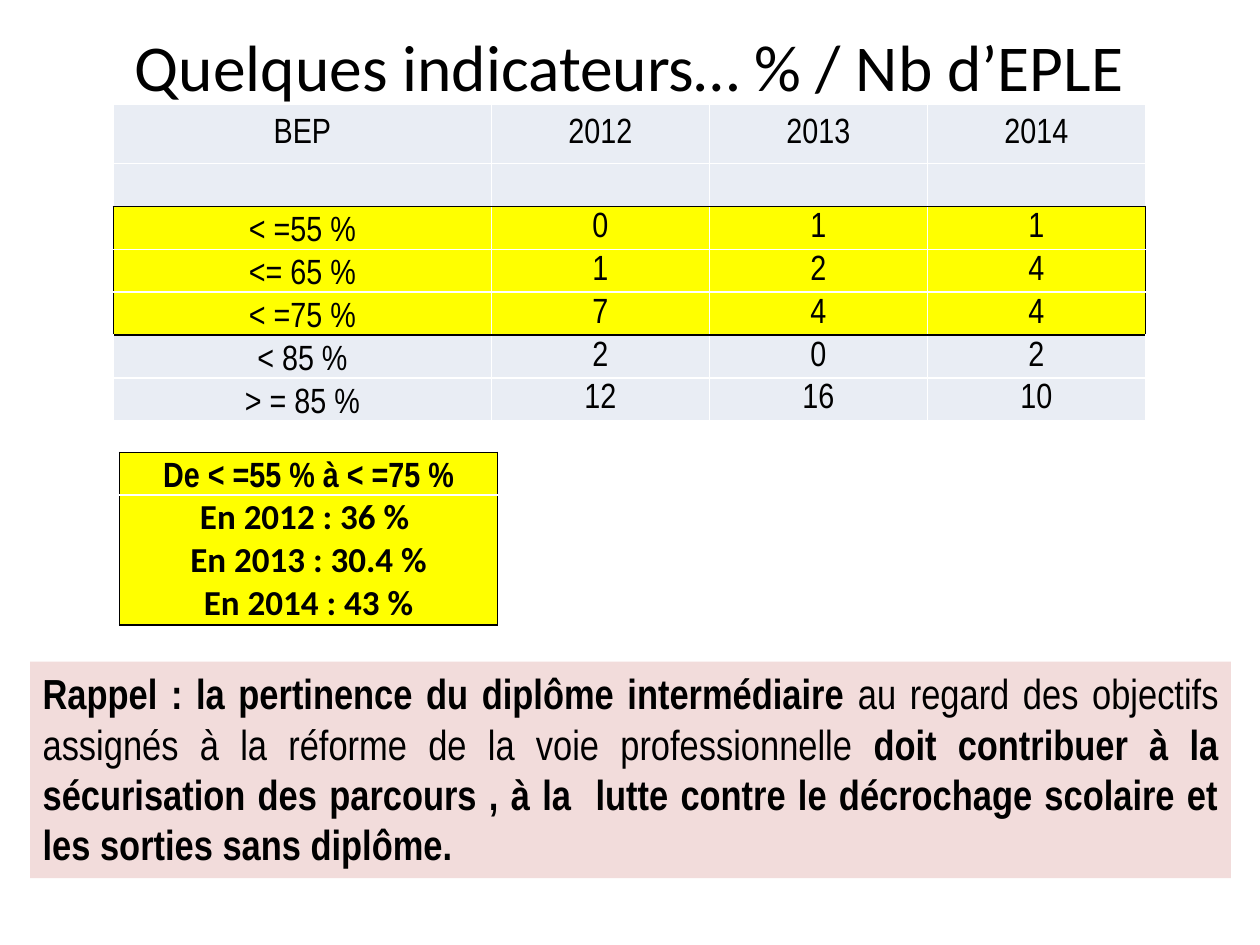
from dataclasses import dataclass

from lxml.etree import fromstring
from pptx import Presentation
from pptx.dml.color import RGBColor
from pptx.enum.shapes import MSO_SHAPE
from pptx.enum.text import MSO_ANCHOR as Anchor, MSO_AUTO_SIZE as AutoSize, PP_ALIGN as Align
from pptx.oxml.ns import nsdecls
from pptx.util import Inches, Pt


@dataclass(frozen=True)
class Theme:
    black: str = "000000"
    white: str = "FFFFFF"
    pale: str = "E9EDF4"
    yellow: str = "FFFF00"
    pink: str = "F2DCDB"
    narrow: str = "Arial Narrow"
    sans: str = "Calibri"
    title_size: float = 37.4
    table_size: int = 20
    note_size: int = 24


theme = Theme()


def write(para, text, font=theme.narrow, size=theme.table_size, bold=False, align=Align.CENTER):
    """Add one formatted span to a paragraph."""
    para.alignment = align
    span = para.add_run()
    span.text = text
    span.font.name, span.font.size, span.font.bold = font, Pt(size), bold
    span.font.color.rgb = RGBColor.from_string(theme.black)


def style_cell(cell, fill, black_sides, anchor):
    """Fill a cell and draw its four borders, black on the named sides."""
    cell.margin_left = cell.margin_right = cell.margin_top = Inches(0.01)
    cell.margin_bottom = 0
    cell.vertical_anchor = anchor
    cell.fill.solid()
    cell.fill.fore_color.rgb = RGBColor.from_string(fill)
    properties = cell._tc.get_or_add_tcPr()
    for position, side in enumerate("LRTB"):
        color = theme.black if side in black_sides else theme.white
        properties.insert(position, fromstring(
            f'<a:ln{side} {nsdecls("a")} w="12700"><a:solidFill>'
            f'<a:srgbClr val="{color}"/></a:solidFill></a:ln{side}>'))


deck = Presentation()
deck.slide_width, deck.slide_height = Inches(10), Inches(7.5)
page = deck.slides.add_slide(deck.slide_layouts[5])

# Title
title = page.shapes.title
title.left, title.top, title.width, title.height = map(Inches, (0.5, 0.21, 9, 0.62))
title.text_frame.vertical_anchor = Anchor.MIDDLE
title.text_frame.auto_size = AutoSize.NONE
write(title.text_frame.paragraphs[0], "Quelques indicateurs… % / Nb d’EPLE",
      font=theme.sans, size=theme.title_size)

# Tables: position, column widths, row heights, highlighted rows, bold, cells
row = 0.34
tables = [
    ((0.9, 0.83), [3, 1.73, 1.73, 1.73], [0.47] + [row] * 6, range(2, 5), False, [
        ["BEP", "2012", "2013", "2014"],
        ["", "", "", ""],
        ["< =55 %", "0", "1", "1"],
        ["<= 65 %", "1", "2", "4"],
        ["< =75 %", "7", "4", "4"],
        ["< 85 %", "2", "0", "2"],
        ["> = 85 %", "12", "16", "10"],
    ]),
    ((0.95, 3.59), [3], [row, 3 * row], range(2), True, [
        ["De < =55 % à < =75 %"],
        ["En 2012 : 36 % \nEn 2013 : 30.4 %\nEn 2014 : 43 %"],
    ]),
]
for (left, top), widths, heights, band, bold, rows in tables:
    table = page.shapes.add_table(
        len(heights), len(widths), Inches(left), Inches(top),
        Inches(sum(widths)), Inches(sum(heights))).table
    table.first_row = table.horz_banding = False
    for column, width in zip(table.columns, widths):
        column.width = Inches(width)
    for line, height in zip(table.rows, heights):
        line.height = Inches(height)

    for r, values in enumerate(rows):
        for c, value in enumerate(values):
            # Black outline around the highlighted band only
            edges = {
                "L": r in band and c == 0,
                "R": r in band and c == len(widths) - 1,
                "T": r in (band.start, band.stop),
                "B": r in (band.start - 1, band.stop - 1),
            }
            cell = table.cell(r, c)
            low = c == 0 and (r in band or r >= band.stop)
            style_cell(cell, theme.yellow if r in band else theme.pale,
                       [side for side, black in edges.items() if black],
                       Anchor.BOTTOM if low else Anchor.MIDDLE)
            frame = cell.text_frame
            for number, text in enumerate(value.split("\n") if value else []):
                para = frame.add_paragraph() if number else frame.paragraphs[0]
                write(para, text, bold=bold,
                      font=theme.sans if bold and r else theme.narrow)

# Reminder
box = page.shapes.add_shape(MSO_SHAPE.RECTANGLE, *map(Inches, (0.24, 5.25, 9.53, 1.72)))
box.shadow.inherit = False
box.fill.solid()
box.fill.fore_color.rgb = RGBColor.from_string(theme.pink)
box.line.fill.background()
frame = box.text_frame
frame.word_wrap = True
frame.auto_size = AutoSize.SHAPE_TO_FIT_TEXT
frame.vertical_anchor = Anchor.TOP
for text, bold in [
    ("Rappel : la pertinence du diplôme intermédiaire ", True),
    ("au regard des objectifs assignés à la réforme de la voie professionnelle ", False),
    ("doit contribuer à la sécurisation des parcours , à la  lutte contre le "
     "décrochage scolaire et les sorties sans diplôme.", True),
]:
    write(frame.paragraphs[0], text, size=theme.note_size, bold=bold, align=Align.JUSTIFY)

deck.save("out.pptx")
